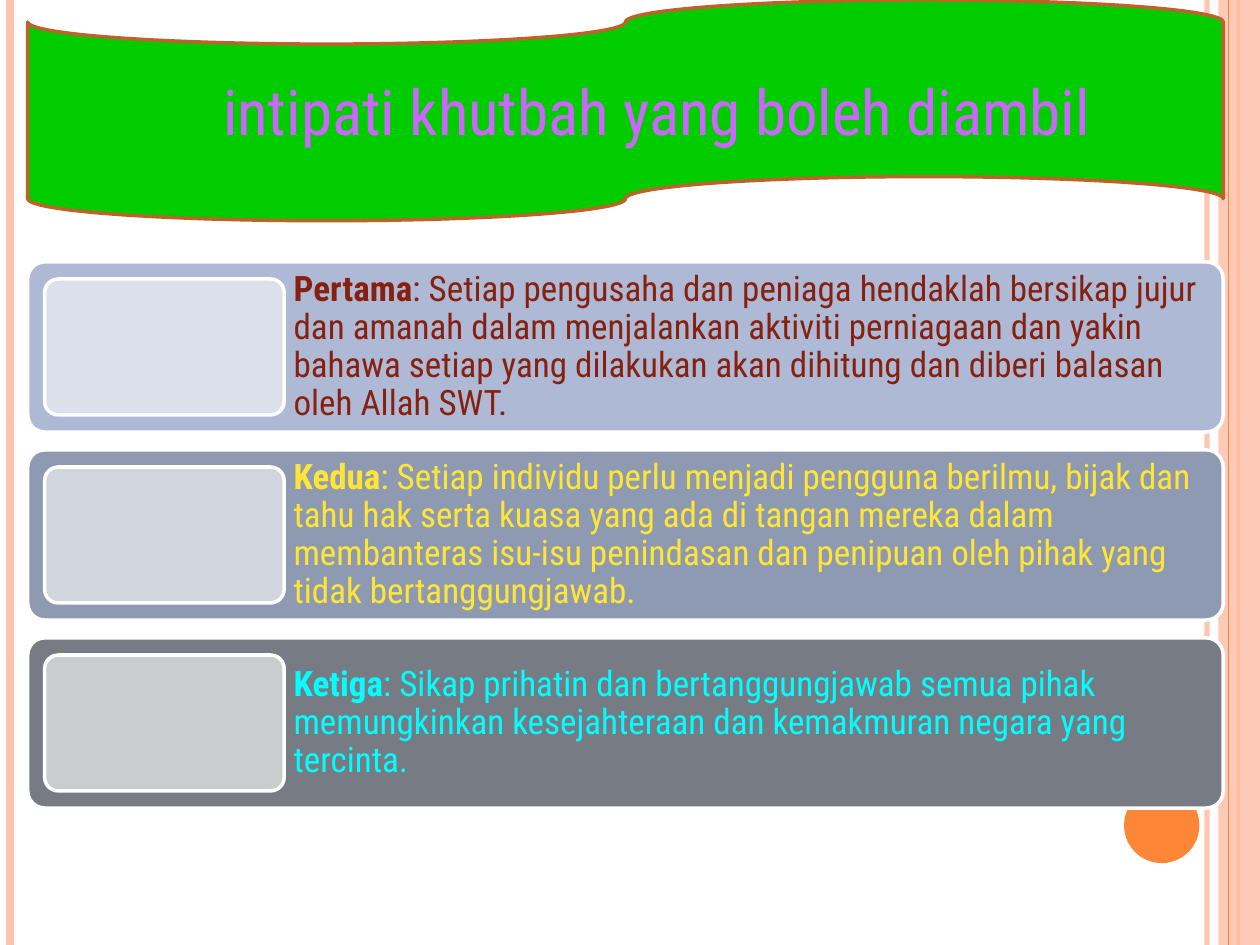
"""Build the slide on the three lessons of the sermon."""
import lxml.etree
import pptx
import pptx.dml.color
import pptx.enum.shapes
import pptx.enum.text
import pptx.oxml.ns
import pptx.util

Cm = pptx.util.Cm
Pt = pptx.util.Pt
RGBColor = pptx.dml.color.RGBColor
Shape = pptx.enum.shapes.MSO_SHAPE
Align = pptx.enum.text.PP_ALIGN
Anchor = pptx.enum.text.MSO_ANCHOR
qn = pptx.oxml.ns.qn

PEACH = RGBColor(0xFE, 0xC3, 0xAE)
ORANGE = RGBColor(0xFE, 0x86, 0x37)
GREEN = RGBColor(0x00, 0xCC, 0x00)
RUST = RGBColor(0xBC, 0x63, 0x29)
VIOLET = RGBColor(0xCC, 0x66, 0xFF)
WHITE = RGBColor(0xFF, 0xFF, 0xFF)
MAROON = RGBColor(0x86, 0x21, 0x10)
YELLOW = RGBColor(0xFF, 0xE6, 0x36)
CYAN = RGBColor(0x00, 0xFF, 0xFF)
BLUE = RGBColor(0xAE, 0xBA, 0xD5)
PALE_BLUE = RGBColor(0xDB, 0xE0, 0xEB)
SLATE = RGBColor(0x8E, 0x9A, 0xB1)
PALE_SLATE = RGBColor(0xD1, 0xD5, 0xDE)
GRAY = RGBColor(0x77, 0x7C, 0x84)
PALE_GRAY = RGBColor(0xCA, 0xCC, 0xCE)

WIDTH, HEIGHT = 25.4, 19.05
CARD_LEFT, CARD_TOP, CARD_WIDTH, CARD_HEIGHT = 0.56, 5.28, 24.1, 3.43
CARD_PITCH = 3.79
PANEL_LEFT, PANEL_WIDTH, PANEL_HEIGHT = 0.9, 4.83, 2.74
TEXT_LEFT = 5.72

RULES = [(24.33, PEACH, 3, 93), (0.2, PEACH, 4.5, 100), (24.97, ORANGE, 1.5, 100)]

LESSONS = [
    ("Pertama", ": Setiap pengusaha dan peniaga hendaklah bersikap jujur dan amanah "
     "dalam menjalankan aktiviti perniagaan dan yakin bahawa setiap yang dilakukan "
     "akan dihitung dan diberi balasan oleh Allah SWT.", MAROON, BLUE, PALE_BLUE),
    ("Kedua", ": Setiap individu perlu menjadi pengguna berilmu, bijak dan tahu hak "
     "serta kuasa yang ada di tangan mereka dalam membanteras isu-isu penindasan dan "
     "penipuan oleh pihak yang tidak bertanggungjawab.", YELLOW, SLATE, PALE_SLATE),
    ("Ketiga", ": Sikap prihatin dan bertanggungjawab semua pihak memungkinkan "
     "kesejahteraan dan kemakmuran negara yang tercinta.", CYAN, GRAY, PALE_GRAY),
]


class Painter:
    """Hold the style and the current page, and draw each kind of element."""

    font_name = "Roboto Condensed"

    def __init__(self, page):
        """Start drawing on the given page."""
        self.page = page

    def assign(self, target, formats):
        """Set every format value on the target."""
        for name, value in formats.items():
            setattr(target, name, value)

    def fade(self, shape, opacity):
        """Make the first colour of the shape partly transparent."""
        if opacity < 100:
            color = next(shape.element.spPr.iter(qn("a:srgbClr")))
            lxml.etree.SubElement(color, qn("a:alpha"), val=str(opacity * 1000))

    def rule(self, left, color, width, opacity=100):
        """Draw a vertical line over the full page height."""
        line = self.page.shapes.add_connector(
            pptx.enum.shapes.MSO_CONNECTOR.STRAIGHT, Cm(left), 0, Cm(left), Cm(HEIGHT))
        line.line.color.rgb = color
        line.line.width = Pt(width)
        self.fade(line, opacity)
        lxml.etree.SubElement(line.element.spPr, qn("a:effectLst"))

    def shape(self, kind, frame, fill, border=None, opacity=100):
        """Draw a filled preset shape with an optional border."""
        shape = self.page.shapes.add_shape(kind, *map(Cm, frame))
        shape.shadow.inherit = False
        shape.fill.solid()
        shape.fill.fore_color.rgb = fill
        self.fade(shape, opacity)
        if border is None:
            shape.line.fill.background()
        else:
            shape.line.color.rgb = border
            shape.line.width = Pt(2)
        return shape

    def rounded(self, frame, fill):
        """Draw a white-edged rounded rectangle."""
        self.shape(Shape.ROUNDED_RECTANGLE, frame, fill, WHITE).adjustments[0] = 0.1

    def add_span(self, para, text, size, color, bold=False):
        """Add a styled span of text to a paragraph."""
        span = para.add_run()
        span.text = text
        self.assign(span.font, {"name": self.font_name, "size": Pt(size), "bold": bold})
        span.font.color.rgb = color

    def banner(self, frame, text):
        """Draw the waving title banner."""
        box = self.shape(Shape.FLOWCHART_PUNCHED_TAPE, frame, GREEN, RUST)
        self.assign(box.text_frame, {"word_wrap": True, "vertical_anchor": Anchor.MIDDLE})
        para = box.text_frame.paragraphs[0]
        para.alignment = Align.CENTER
        para._p.get_or_add_pPr().set("indent", str(Cm(1.27)))
        self.add_span(para, text, 36, VIOLET)

    def passage(self, frame, heading, body, color):
        """Set a bold heading that runs on into its body text."""
        box = self.page.shapes.add_textbox(*map(Cm, frame))
        margins = dict.fromkeys(
            ("margin_left", "margin_top", "margin_right", "margin_bottom"), Cm(0.2))
        self.assign(box.text_frame, {"word_wrap": True, "vertical_anchor": Anchor.MIDDLE,
                                     **margins})
        para = box.text_frame.paragraphs[0]
        para.line_spacing = 0.9
        self.add_span(para, heading, 20, color, bold=True)
        self.add_span(para, body, 20, color)

    def card(self, top, heading, body, color, fill, panel_fill):
        """Draw one lesson card with its text and side panel."""
        self.rounded((CARD_LEFT, top, CARD_WIDTH, CARD_HEIGHT), fill)
        text_width = CARD_LEFT + CARD_WIDTH - TEXT_LEFT
        self.passage((TEXT_LEFT, top, text_width, CARD_HEIGHT), heading, body, color)
        panel_top = top + (CARD_HEIGHT - PANEL_HEIGHT) / 2
        self.rounded((PANEL_LEFT, panel_top, PANEL_WIDTH, PANEL_HEIGHT), panel_fill)


def main():
    """Build and save the deck."""
    deck = pptx.Presentation()
    deck.slide_width, deck.slide_height = Cm(WIDTH), Cm(HEIGHT)
    painter = Painter(deck.slides.add_slide(deck.slide_layouts[6]))
    for rule in RULES:
        painter.rule(*rule)
    painter.shape(Shape.RECTANGLE, (24.56, 0, 0.84, HEIGHT), PEACH, opacity=87)
    painter.rule(24.77, ORANGE, 0.75)
    painter.shape(Shape.OVAL, (22.66, 15.88, 1.52, 1.52), ORANGE)
    painter.banner((CARD_LEFT, 0, CARD_WIDTH, 4.45), "intipati khutbah yang boleh diambil")
    for index, lesson in enumerate(LESSONS):
        painter.card(CARD_TOP + index * CARD_PITCH, *lesson)
    deck.save("out.pptx")


if __name__ == "__main__":
    main()
